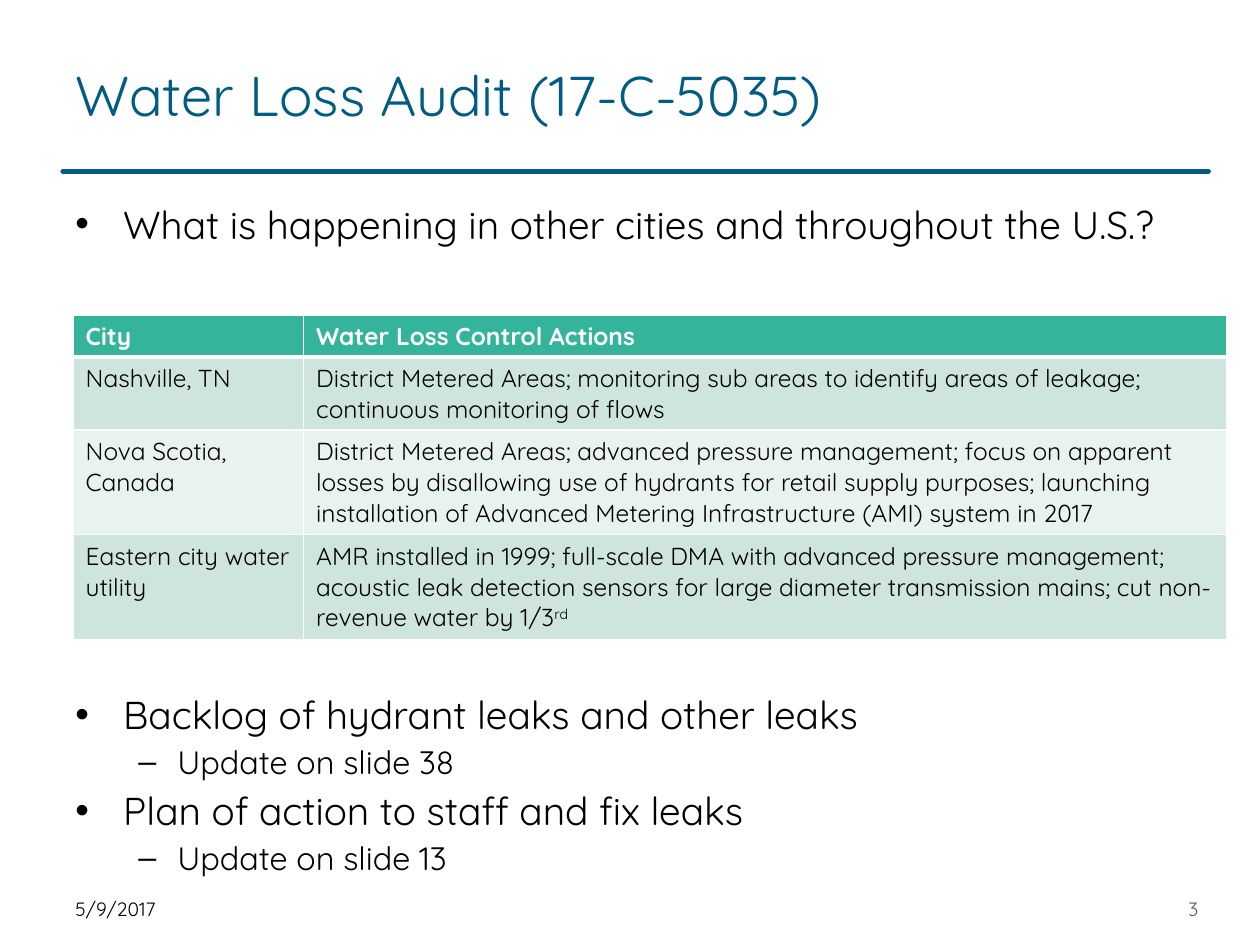
from lxml.etree import SubElement
from pptx import Presentation
from pptx.dml.color import RGBColor
from pptx.enum.shapes import MSO_CONNECTOR as CONN
from pptx.enum.text import MSO_ANCHOR as ANCHOR, PP_ALIGN as ALIGN
from pptx.oxml import parse_xml
from pptx.oxml.ns import nsdecls, qn
from pptx.util import Inches, Pt

FONT = "Quicksand"
NAVY = RGBColor(0x00, 0x5C, 0x82)
GREEN = RGBColor(0x35, 0xB4, 0x9C)
BAND_DARK = RGBColor(0xCE, 0xE5, 0xDE)
BAND_LIGHT = RGBColor(0xE8, 0xF2, 0xEF)
WHITE = RGBColor(0xFF, 0xFF, 0xFF)
BLACK = RGBColor(0, 0, 0)
GRAY = RGBColor(0x59, 0x59, 0x59)

TITLE = "Water Loss Audit (17-C-5035)"
BULLET_BOXES = [
    ((0.5, 1.54, 9, 0.6), [
        (0, "What is happening in other cities and throughout the U.S.?"),
    ]),
    ((0.5, 5.43, 9, 1.65), [
        (0, "Backlog of hydrant leaks and other leaks"),
        (1, "Update on slide 38"),
        (0, "Plan of action to staff and fix leaks"),
        (1, "Update on slide 13"),
    ]),
]
LEVELS = [
    {"char": "•", "size": 22.2, "left": 0.38, "hang": 0.38},
    {"char": "–", "size": 18.5, "left": 0.81, "hang": 0.31},
]
ROWS = [
    ("City", "Water Loss Control Actions"),
    ("Nashville, TN",
     "District Metered Areas; monitoring sub areas to identify areas of "
     "leakage; continuous monitoring of flows"),
    ("Nova Scotia, Canada",
     "District Metered Areas; advanced pressure management; focus on apparent "
     "losses by disallowing use of hydrants for retail supply purposes; "
     "launching installation of Advanced Metering Infrastructure (AMI) system "
     "in 2017"),
    ("Eastern city water utility",
     "AMR installed in 1999; full-scale DMA with advanced pressure management; "
     "acoustic leak detection sensors for large diameter transmission mains; "
     "cut non-revenue water by 1/3"),
]
ORDINAL = "rd"
COL_WIDTHS = [1.83, 7.33]
ROW_HEIGHTS = [0.33, 0.58, 0.83, 0.83]
FOOTERS = [
    ((0.5, 7.11, 1.97, 0.21), "5/9/2017", ALIGN.LEFT, BLACK),
    ((8.77, 7.11, 0.84, 0.21), "3", ALIGN.RIGHT, GRAY),
]


def add_run(p, text, size, color, bold=False):
    r = p.add_run()
    r.text = text
    r.font.color.rgb = color
    for name, value in {"name": FONT, "size": Pt(size), "bold": bold}.items():
        setattr(r.font, name, value)
    return r


def add_text_box(slide, box, anchor):
    tf = slide.shapes.add_textbox(*map(Inches, box)).text_frame
    tf.word_wrap = True
    tf.vertical_anchor = anchor
    return tf


def add_bullets(slide, box, items):
    tf = add_text_box(slide, box, ANCHOR.TOP)
    for i, (level, text) in enumerate(items):
        p = tf.add_paragraph() if i else tf.paragraphs[0]
        style = LEVELS[level]
        p.level = level
        p.space_before = Pt(3 if i else 0)
        pPr = p._p.get_or_add_pPr()
        pPr.set("marL", str(Inches(style["left"])))
        pPr.set("indent", str(-Inches(style["hang"])))
        SubElement(pPr, qn("a:buFont")).set("typeface", "Arial")
        SubElement(pPr, qn("a:buChar")).set("char", style["char"])
        add_run(p, text, style["size"], BLACK)


def set_borders(cell, widths):
    tcPr = cell._tc.get_or_add_tcPr()
    for i, (side, width) in enumerate(widths.items()):
        tcPr.insert(i, parse_xml(
            f'<a:ln{side} {nsdecls("a")} w="{Pt(width)}"><a:solidFill>'
            f'<a:srgbClr val="{WHITE}"/></a:solidFill></a:ln{side}>'))


def add_city_table(slide):
    table = slide.shapes.add_table(
        len(ROWS), len(COL_WIDTHS), Inches(0.58), Inches(2.5),
        Inches(sum(COL_WIDTHS)), Inches(sum(ROW_HEIGHTS))).table
    for col, width in zip(table.columns, COL_WIDTHS):
        col.width = Inches(width)
    for i, (row, height) in enumerate(zip(table.rows, ROW_HEIGHTS)):
        row.height = Inches(height)
        header = i == 0
        fill = GREEN if header else BAND_DARK if i % 2 else BAND_LIGHT
        for cell, text in zip(row.cells, ROWS[i]):
            cell.fill.solid()
            cell.fill.fore_color.rgb = fill
            set_borders(cell, {"L": 1, "R": 1, "T": 3 if i == 1 else 1,
                               "B": 3 if header else 1})
            add_run(cell.text_frame.paragraphs[0], text, 14,
                    WHITE if header else BLACK, header)
    last = table.cell(len(ROWS) - 1, 1).text_frame.paragraphs[0]
    r = add_run(last, ORDINAL, 14, BLACK)
    r._r.get_or_add_rPr().set("baseline", "30000")


def add_rule(slide):
    line = slide.shapes.add_connector(
        CONN.STRAIGHT, Inches(0.5), Inches(1.36), Inches(9.59), Inches(1.36))
    line.line.color.rgb = NAVY
    line.line.width = Pt(3)
    line.line._get_or_add_ln().set("cap", "rnd")
    SubElement(line._element.spPr, qn("a:effectLst"))


def add_title(slide):
    sp = slide.shapes.title
    box = {"left": 0.5, "top": 0.3, "width": 7.73, "height": 0.9}
    for name, value in box.items():
        setattr(sp, name, Inches(value))
    tf = sp.text_frame
    tf.word_wrap = True
    tf.vertical_anchor = ANCHOR.MIDDLE
    p = tf.paragraphs[0]
    p.alignment = ALIGN.LEFT
    add_run(p, TITLE, 32, NAVY)


def main():
    prs = Presentation()
    prs.slide_width, prs.slide_height = Inches(10), Inches(7.5)
    slide = prs.slides.add_slide(prs.slide_layouts[5])
    add_title(slide)
    add_rule(slide)
    for box, items in BULLET_BOXES:
        add_bullets(slide, box, items)
    add_city_table(slide)
    for box, text, align, color in FOOTERS:
        p = add_text_box(slide, box, ANCHOR.MIDDLE).paragraphs[0]
        p.alignment = align
        add_run(p, text, 11, color)
    prs.save("out.pptx")


if __name__ == "__main__":
    main()
